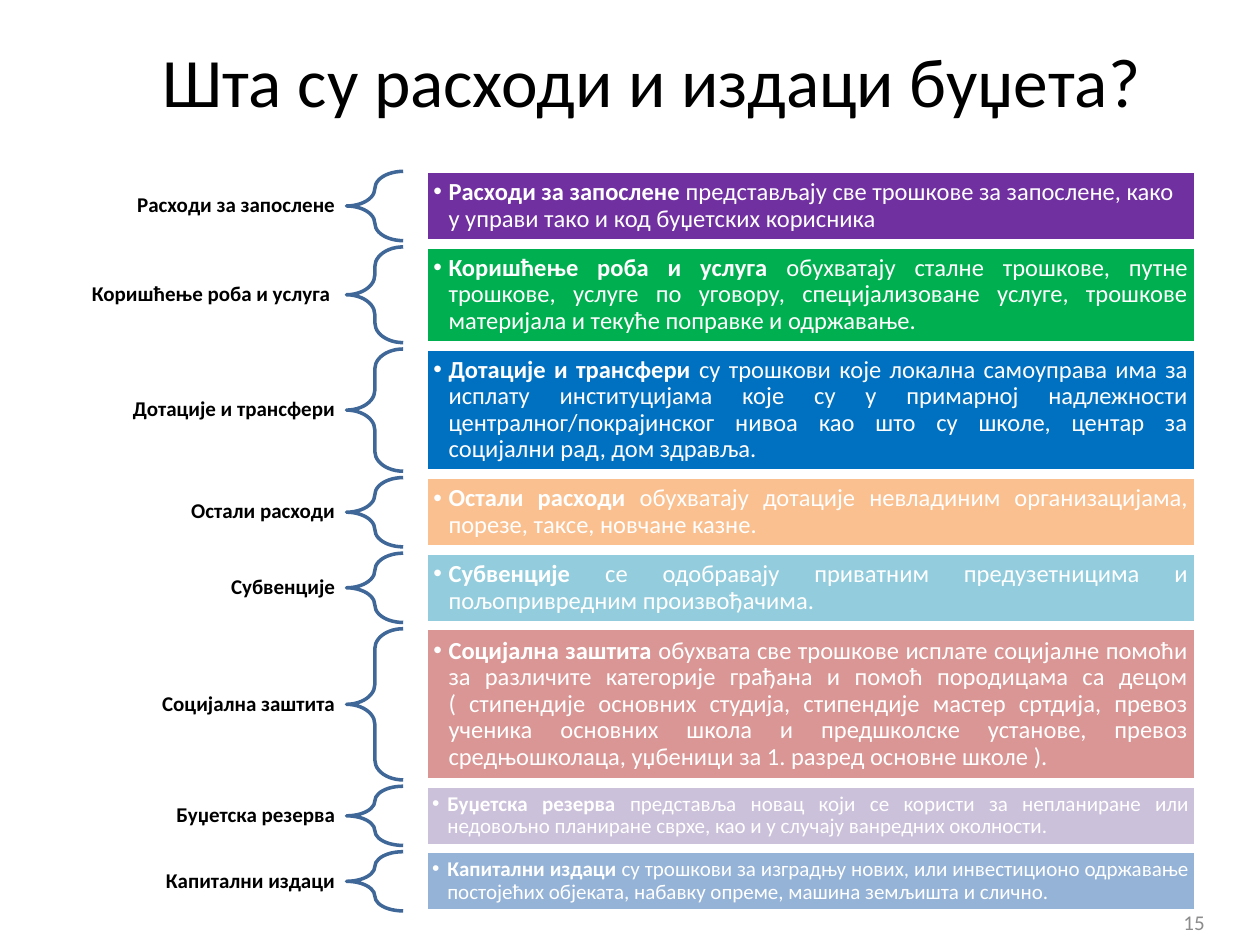
from dataclasses import dataclass

from lxml import etree
from pptx import Presentation
from pptx.dml.color import RGBColor
from pptx.enum.shapes import MSO_SHAPE
from pptx.enum.text import MSO_ANCHOR, MSO_AUTO_SIZE, PP_ALIGN
from pptx.oxml.ns import qn
from pptx.util import Inches, Pt

LEFT, CENTER, RIGHT, JUSTIFY = (
    PP_ALIGN.LEFT, PP_ALIGN.CENTER, PP_ALIGN.RIGHT, PP_ALIGN.JUSTIFY)
MIDDLE = MSO_ANCHOR.MIDDLE
NO_AUTOFIT = MSO_AUTO_SIZE.NONE
RECTANGLE, LEFT_BRACE = MSO_SHAPE.RECTANGLE, MSO_SHAPE.LEFT_BRACE
TITLE_ONLY = 5


@dataclass(frozen=True)
class Theme:
    font: str = "Calibri"
    title_size: float = 39.6
    label_size: float = 12
    body_size: float = 14
    small_size: float = 12
    ink: str = "000000"
    paper: str = "FFFFFF"
    brace: str = "3F6797"
    muted: str = "8C8C8C"
    line_width: float = 2


THEME = Theme()

# Columns and vertical rhythm, in inches
LABEL_LEFT, LABEL_WIDTH, LABEL_HEIGHT = 0.5, 2.25, 0.26
BRACE_LEFT, BRACE_WIDTH = 2.75, 0.45
PANEL_LEFT, PANEL_WIDTH = 3.38, 6.11
FIRST_TOP, ROW_GAP = 1.36, 0.05

# Label, bold lead, explanation, height, fill, text size, alignment
EXPENSES = [
    ("Расходи за запослене", "Расходи за запослене ",
     "представљају све трошкове за запослене, како у управи тако и код "
     "буџетских корисника",
     0.55, "7030A0", THEME.body_size, LEFT),
    ("Коришћење роба и услуга ", "Коришћење роба и услуга ",
     "обухватају сталне трошкове, путне трошкове, услуге по уговору, "
     "специјализоване услуге, трошкове материјала и текуће поправке и "
     "одржавање.",
     0.76, "00B050", THEME.body_size, JUSTIFY),
    ("Дотације и трансфери", "Дотације и трансфери ",
     "су трошкови које локална самоуправа има за исплату институцијама које "
     "су у примарној надлежности централног/покрајинског нивоа као што су "
     "школе, центар за социјални рад, дом здравља. ",
     0.97, "0070C0", THEME.body_size, JUSTIFY),
    ("Остали расходи", "Остали расходи ",
     "обухватају дотације невладиним организацијама, порезе, таксе, новчане "
     "казне.",
     0.55, "FAC090", THEME.body_size, JUSTIFY),
    ("Субвенције", "Субвенције",
     " сe одобравају приватним предузетницима и пољопривредним "
     "произвођачима. ",
     0.55, "93CDDD", THEME.body_size, JUSTIFY),
    ("Социјална заштита", "Социјална заштита ",
     "обухвата све трошкове исплате социјалне помоћи за различите категорије "
     "грађана и помоћ породицама са децом ( стипендије основних студија, "
     "стипендије мастер сртдија, превоз ученика основних школа и предшколске "
     "установе, превоз средњошколаца, уџбеници за 1. разред основне школе ). ",
     1.2, "D99694", THEME.body_size, JUSTIFY),
    ("Буџетска резерва", "Буџетска резерва ",
     "представља новац који се користи за непланиране или недовољно планиране "
     "сврхе, као и у случају ванредних околности.",
     0.47, "CCC1DA", THEME.small_size, JUSTIFY),
    ("Капитални издаци", "Капитални издаци ",
     "су трошкови за изградњу нових, или инвестиционо одржавање постојећих "
     "објеката, набавку опреме, машина земљишта и слично.",
     0.47, "95B3D7", THEME.small_size, JUSTIFY),
]


def add_run(paragraph, text, *, size, color, bold=False):
    run = paragraph.add_run()
    run.text = text
    run.font.name = THEME.font
    run.font.size = Pt(size)
    run.font.bold = bold
    run.font.color.rgb = RGBColor.from_string(color)


def add_bullet(paragraph, indent):
    properties = paragraph._p.get_or_add_pPr()
    properties.set("marL", str(Inches(indent)))
    properties.set("indent", str(Inches(-indent)))
    font = etree.SubElement(properties, qn("a:buFont"))
    font.set("typeface", "Arial")
    etree.SubElement(properties, qn("a:buChar")).set("char", "•")


class SlideBuilder:
    def __init__(self, slide, theme):
        self.slide = slide
        self.theme = theme

    def prepare(self, frame, align, inset_x=0.1, inset_y=0.05, spacing=None):
        """Set up a text frame and return its first paragraph."""
        frame.word_wrap = True
        frame.auto_size = NO_AUTOFIT
        frame.vertical_anchor = MIDDLE
        frame.margin_left = frame.margin_right = Inches(inset_x)
        frame.margin_top = frame.margin_bottom = Inches(inset_y)
        paragraph = frame.paragraphs[0]
        paragraph.alignment = align
        if spacing:
            paragraph.line_spacing = spacing
        return paragraph

    def title(self, text, left, top, width, height):
        title = self.slide.shapes.title
        title.left, title.top = Inches(left), Inches(top)
        title.width, title.height = Inches(width), Inches(height)
        add_run(self.prepare(title.text_frame, CENTER), text,
                size=self.theme.title_size, color=self.theme.ink)

    def text(self, text, left, top, width, height, *, size, color, bold=False,
             **frame_format):
        box = self.slide.shapes.add_textbox(
            Inches(left), Inches(top), Inches(width), Inches(height))
        add_run(self.prepare(box.text_frame, RIGHT, **frame_format), text,
                size=size, color=color, bold=bold)

    def shape(self, kind, left, top, width, height, line):
        shape = self.slide.shapes.add_shape(
            kind, Inches(left), Inches(top), Inches(width), Inches(height))
        shape.shadow.inherit = False
        shape.line.color.rgb = RGBColor.from_string(line)
        shape.line.width = Pt(self.theme.line_width)
        return shape

    def brace(self, top, height):
        brace = self.shape(LEFT_BRACE, BRACE_LEFT, top, BRACE_WIDTH, height,
                           self.theme.brace)
        brace.fill.background()
        brace.adjustments[0] = 0.35
        brace.adjustments[1] = 0.5

    def panel(self, lead, explanation, top, height, fill, size, align):
        panel = self.shape(RECTANGLE, PANEL_LEFT, top, PANEL_WIDTH, height,
                           self.theme.paper)
        panel.fill.solid()
        panel.fill.fore_color.rgb = RGBColor.from_string(fill)
        inset = 0.06 if size == self.theme.body_size else 0.05
        paragraph = self.prepare(panel.text_frame, align, inset, inset, 0.9)
        add_bullet(paragraph, 0.12)
        add_run(paragraph, lead, size=size, color=self.theme.paper, bold=True)
        add_run(paragraph, explanation, size=size, color=self.theme.paper)


def main():
    deck = Presentation()
    deck.slide_width, deck.slide_height = Inches(10), Inches(7.5)
    slide = deck.slides.add_slide(deck.slide_layouts[TITLE_ONLY])
    builder = SlideBuilder(slide, THEME)

    builder.title("Шта су расходи и издаци буџета?", 0.67, 0.29, 9, 0.68)

    # One row per kind of expense: label, brace, explanation
    top = FIRST_TOP
    for label, lead, explanation, height, fill, size, align in EXPENSES:
        builder.text(label, LABEL_LEFT, top + (height - LABEL_HEIGHT) / 2,
                     LABEL_WIDTH, LABEL_HEIGHT, size=THEME.label_size,
                     color=THEME.ink, bold=True, inset_x=0.09, inset_y=0.03,
                     spacing=0.9)
        builder.brace(top, height)
        builder.panel(lead, explanation, top, height, fill, size, align)
        top += height + ROW_GAP

    # Page number
    builder.text("15", 7.33, 7.12, 2.33, 0.4, size=THEME.small_size,
                 color=THEME.muted)

    deck.save("out.pptx")


if __name__ == "__main__":
    main()
